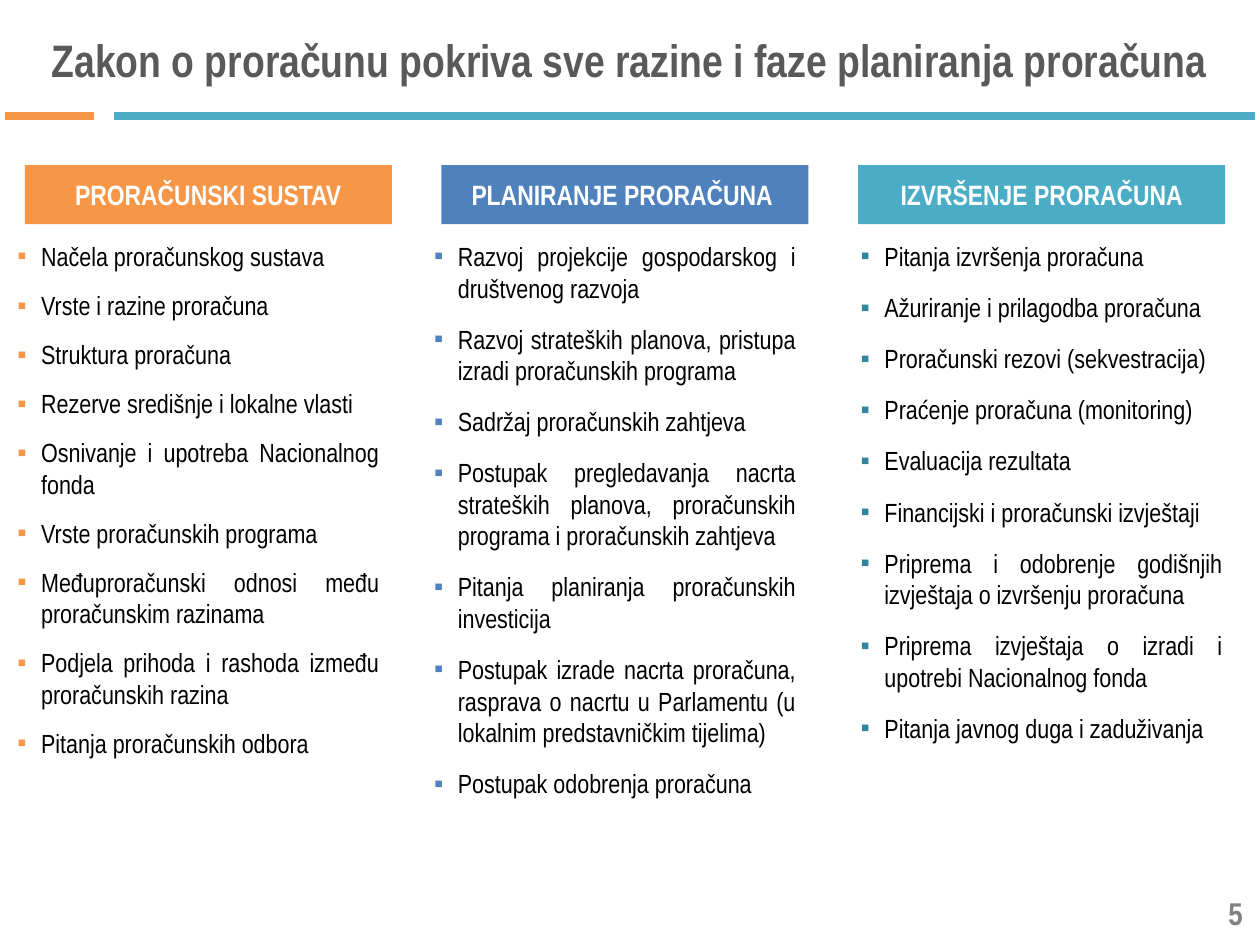
import pptx
import pptx.dml.color
import pptx.enum.shapes
import pptx.enum.text
import pptx.oxml
import pptx.oxml.ns
import pptx.util
from dataclasses import dataclass
from lxml import etree

Cm = pptx.util.Cm
Pt = pptx.util.Pt
ALIGN = pptx.enum.text.PP_ALIGN
ANCHOR = pptx.enum.text.MSO_ANCHOR

TITLE = "Zakon o proračunu pokriva sve razine i faze planiranja proračuna"
PAGE_NUMBER = "5"
COLUMNS = [
    {
        "heading": "PRORAČUNSKI SUSTAV",
        "fill": "F79646", "bullet": "F79646", "outdent": 0.4, "before": 0,
        "items": [
            "Načela proračunskog sustava",
            "Vrste i razine proračuna",
            "Struktura proračuna",
            "Rezerve središnje i lokalne vlasti",
            "Osnivanje i upotreba Nacionalnog fonda",
            "Vrste proračunskih programa",
            "Međuproračunski odnosi među proračunskim razinama",
            "Podjela prihoda i rashoda između proračunskih razina",
            "Pitanja proračunskih odbora",
        ],
    },
    {
        "heading": "PLANIRANJE PRORAČUNA ",
        "fill": "4F81BD", "bullet": "4F81BD", "outdent": 0.4, "before": 1.2,
        "items": [
            "Razvoj projekcije gospodarskog i društvenog razvoja",
            "Razvoj strateških planova, pristupa izradi proračunskih programa",
            "Sadržaj proračunskih zahtjeva",
            "Postupak pregledavanja nacrta strateških planova, "
            "proračunskih programa i proračunskih zahtjeva",
            "Pitanja planiranja proračunskih investicija ",
            "Postupak izrade nacrta proračuna, rasprava o nacrtu u Parlamentu "
            "(u lokalnim predstavničkim tijelima)",
            "Postupak odobrenja proračuna",
        ],
    },
    {
        "heading": "IZVRŠENJE PRORAČUNA",
        "fill": "4BACC6", "bullet": "31859C", "outdent": 0.2, "before": 1.2,
        "items": [
            "Pitanja izvršenja proračuna",
            "Ažuriranje i prilagodba proračuna",
            "Proračunski rezovi (sekvestracija)",
            "Praćenje proračuna (monitoring) ",
            "Evaluacija rezultata",
            "Financijski i proračunski izvještaji",
            "Priprema i odobrenje godišnjih izvještaja o izvršenju proračuna",
            "Priprema izvještaja o izradi i upotrebi Nacionalnog fonda",
            "Pitanja javnog duga i zaduživanja",
        ],
    },
]


@dataclass(frozen=True)
class Theme:
    font: str = "Arial Narrow"
    title: str = "595959"
    body: str = "000000"
    heading: str = "FFFFFF"
    number: str = "808080"
    accent: str = "F79646"
    rule: str = "4BACC6"
    title_size: float = 26
    heading_size: float = 16
    body_size: float = 15
    number_size: float = 18
    rule_width: float = 4.5


THEME = Theme()
COLUMN_LEFT, COLUMN_PITCH = 0.5, 8.4
HEADING_TOP, HEADING_WIDTH, HEADING_HEIGHT = 3.33, 7.4, 1.19
LIST_TOP, LIST_WIDTH, LIST_HEIGHT = 4.72, 7.8, 13.7
RULE_TOP = 2.33
RULES = [(2.3, 25.3, THEME.rule), (0.1, 1.9, THEME.accent)]


def rgb(value):
    return pptx.dml.color.RGBColor.from_string(value)


def add_bullet(para, color, indent=0.48):
    props = para._p.get_or_add_pPr()
    props.set("marL", str(Cm(indent)))
    props.set("indent", str(-Cm(indent)))
    qn = pptx.oxml.ns.qn
    bullet_color = etree.SubElement(props, qn("a:buClr"))
    etree.SubElement(bullet_color, qn("a:srgbClr"), val=color)
    etree.SubElement(props, qn("a:buFont"), typeface="Arial")
    etree.SubElement(props, qn("a:buChar"), char="▪")


def write(box, text, *, size, color, bold=False, align=ALIGN.CENTER,
          anchor=ANCHOR.MIDDLE, before=0, after=0, bullet=None):
    frame = box.text_frame
    frame.word_wrap = True
    frame.vertical_anchor = anchor
    lines = [text] if isinstance(text, str) else text
    for index, line in enumerate(lines):
        para = frame.add_paragraph() if index else frame.paragraphs[0]
        para.alignment = align
        para.space_before, para.space_after = Pt(before), Pt(after)
        if bullet:
            add_bullet(para, bullet)
        span = para.add_run()
        span.text = line
        span.font.name = THEME.font
        span.font.size = Pt(size)
        span.font.bold = bold
        span.font.color.rgb = rgb(color)


def add_rule(page, start, end, color):
    rule = page.shapes.add_connector(
        pptx.enum.shapes.MSO_CONNECTOR.STRAIGHT,
        Cm(start), Cm(RULE_TOP), Cm(end), Cm(RULE_TOP))
    rule.line.color.rgb = rgb(color)
    rule.line.width = Pt(THEME.rule_width)
    etree.SubElement(rule._element.spPr, pptx.oxml.ns.qn("a:effectLst"))


def add_column(page, index, column):
    left = COLUMN_LEFT + index * COLUMN_PITCH
    items = page.shapes.add_textbox(
        Cm(left - column["outdent"]), Cm(LIST_TOP), Cm(LIST_WIDTH), Cm(LIST_HEIGHT))
    write(items, column["items"], size=THEME.body_size, color=THEME.body,
          align=ALIGN.JUSTIFY, anchor=ANCHOR.TOP, before=column["before"],
          after=10, bullet=column["bullet"])
    heading = page.shapes.add_shape(
        pptx.enum.shapes.MSO_SHAPE.RECTANGLE,
        Cm(left), Cm(HEADING_TOP), Cm(HEADING_WIDTH), Cm(HEADING_HEIGHT))
    heading.shadow.inherit = False
    heading.fill.solid()
    heading.fill.fore_color.rgb = rgb(column["fill"])
    heading.line.fill.background()
    write(heading, column["heading"], size=THEME.heading_size,
          color=THEME.heading, bold=True)


def main():
    deck = pptx.Presentation()
    deck.slide_width, deck.slide_height = Cm(25.4), Cm(19.05)
    page = deck.slides.add_slide(deck.slide_layouts[6])

    title = page.shapes.add_textbox(Cm(0.5), Cm(0.33), Cm(24.4), Cm(1.75))
    write(title, TITLE, size=THEME.title_size, color=THEME.title, bold=True, after=6)
    for start, end, color in RULES:
        add_rule(page, start, end, color)
    for index, column in enumerate(COLUMNS):
        add_column(page, index, column)
    number = page.shapes.add_textbox(Cm(19.38), Cm(17.9), Cm(5.92), Cm(1.02))
    write(number, PAGE_NUMBER, size=THEME.number_size, color=THEME.number,
          bold=True, align=ALIGN.RIGHT)

    deck.save("out.pptx")


if __name__ == "__main__":
    main()
